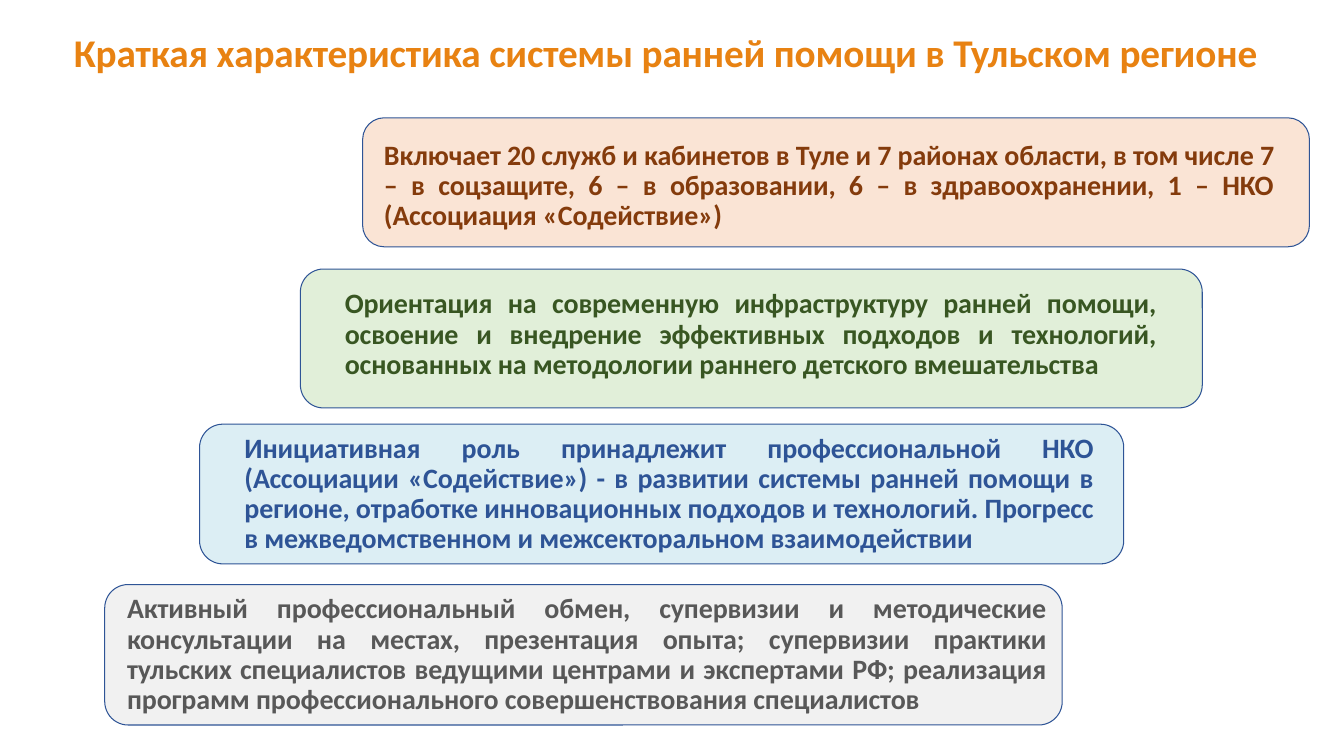
from dataclasses import dataclass

from pptx import Presentation
from pptx.dml.color import RGBColor
from pptx.enum.shapes import MSO_SHAPE
from pptx.enum.text import MSO_ANCHOR, MSO_AUTO_SIZE, PP_ALIGN
from pptx.util import Cm, Pt


@dataclass(frozen=True)
class Theme:
    font: str = "Calibri"
    title_size: float = 28
    card_size: float = 20
    card_leading: float = 21.6
    title: str = "E88212"
    outline: str = "2E5496"
    peach: tuple = ("FAE4D5", "843B0C")
    green: tuple = ("E1EFD9", "385622")
    blue: tuple = ("DCEEF4", "2E5496")
    grey: tuple = ("F1F1F1", "585858")


THEME = Theme()
TITLE = "Краткая характеристика системы ранней помощи в Тульском регионе"

# Box (left, top, width, height) and insets (left, top, right, bottom) in cm
CARDS = [
    ((9.14, 2.97, 23.86, 3.25), (0.38, 0.18, 0.75, 0), THEME.peach,
     "Включает 20 служб и кабинетов в Туле и 7 районах области, в том числе "
     "7 – в соцзащите, 6 – в образовании, 6 – в здравоохранении, 1 – НКО "
     "(Ассоциация «Содействие»)"),
    ((7.57, 6.78, 22.73, 3.5), (0.95, 0, 1, 0.2), THEME.green,
     "Ориентация на современную инфраструктуру ранней помощи, "
     "освоение и внедрение эффективных подходов и технологий, "
     "основанных на методологии раннего детского вмешательства"),
    ((5.03, 10.69, 23.29, 3.52), (0.96, 0, 0.6, 0), THEME.blue,
     "Инициативная роль принадлежит профессиональной НКО "
     "(Ассоциации «Содействие») - в развитии системы ранней помощи в "
     "регионе, отработке инновационных подходов и технологий. "
     "Прогресс в межведомственном и межсекторальном взаимодействии"),
    ((2.64, 14.73, 24.13, 3.54), (0.39, 0, 0.24, 0), THEME.grey,
     "Активный профессиональный обмен, супервизии и методические "
     "консультации на местах, презентация опыта; супервизии практики "
     "тульских специалистов ведущими центрами и экспертами РФ; реализация "
     "программ профессионального совершенствования специалистов"),
]


def write_text(text_frame, text, size, color, insets, anchor, alignment):
    """Fill a frame with one bold paragraph and return that paragraph."""
    text_frame.text = text
    text_frame.word_wrap = True
    text_frame.auto_size = MSO_AUTO_SIZE.NONE
    text_frame.vertical_anchor = anchor
    (text_frame.margin_left, text_frame.margin_top,
     text_frame.margin_right, text_frame.margin_bottom) = map(Cm, insets)
    paragraph = text_frame.paragraphs[0]
    paragraph.alignment = alignment
    font = paragraph.runs[0].font
    font.name = THEME.font
    font.size = Pt(size)
    font.bold = True
    font.color.rgb = RGBColor.from_string(color)
    font._element.set("spc", "-10")  # tracking of -0.1 pt
    return paragraph


def set_title(slide):
    title = slide.shapes.title
    title.left, title.top, title.width, title.height = map(
        Cm, (1.83, 0.66, 31, 1.25))
    write_text(title.text_frame, TITLE, THEME.title_size, THEME.title,
               (0.03, 0.06, 0, 0), MSO_ANCHOR.TOP, PP_ALIGN.LEFT)


def add_card(slide, box, insets, colors, text):
    fill, text_color = colors
    card = slide.shapes.add_shape(MSO_SHAPE.ROUNDED_RECTANGLE, *map(Cm, box))
    card.shadow.inherit = False
    card.fill.solid()
    card.fill.fore_color.rgb = RGBColor.from_string(fill)
    card.line.color.rgb = RGBColor.from_string(THEME.outline)
    card.line.width = Pt(0.75)
    paragraph = write_text(card.text_frame, text, THEME.card_size, text_color,
                           insets, MSO_ANCHOR.MIDDLE, PP_ALIGN.JUSTIFY)
    paragraph.line_spacing = Pt(THEME.card_leading)


def main():
    presentation = Presentation()
    presentation.slide_width = Cm(33.87)
    presentation.slide_height = Cm(19.05)
    title_only = presentation.slide_layouts[5]
    slide = presentation.slides.add_slide(title_only)
    set_title(slide)
    for card in CARDS:
        add_card(slide, *card)
    presentation.save("out.pptx")


if __name__ == "__main__":
    main()
